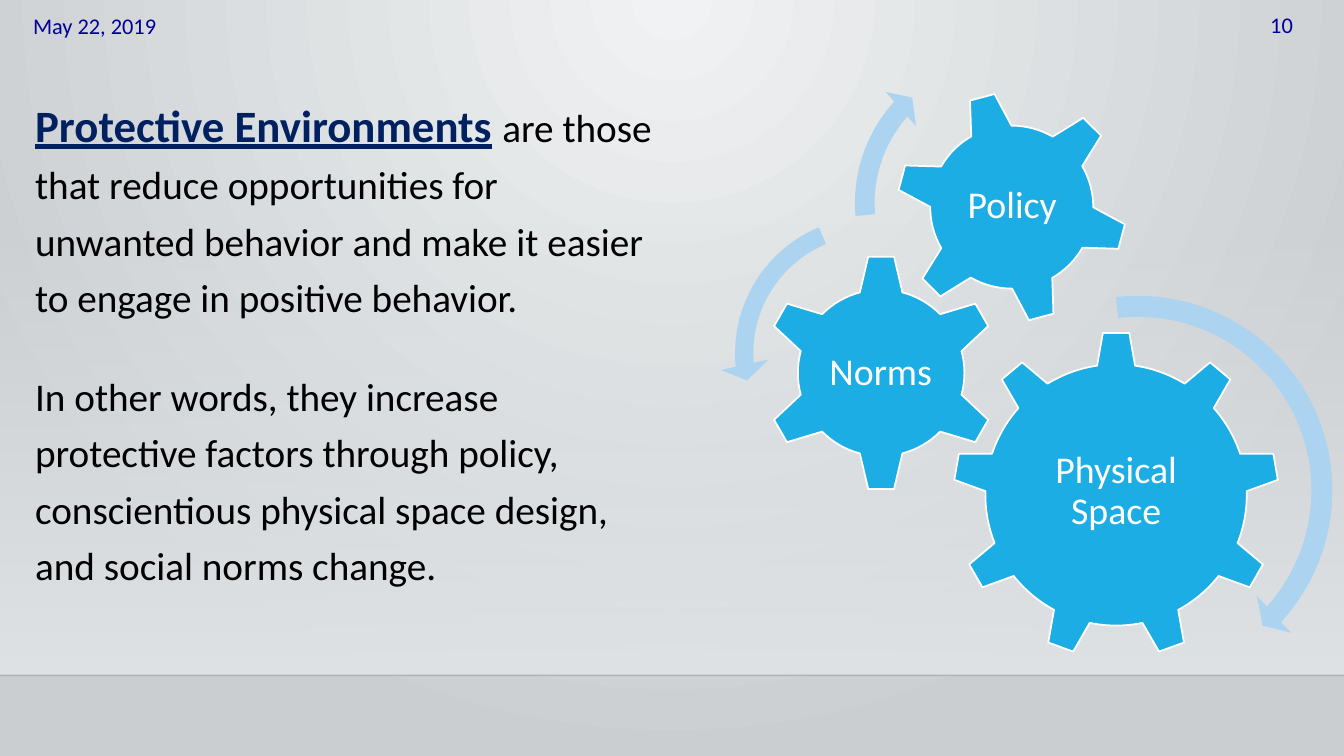
from dataclasses import dataclass

from lxml.etree import SubElement
from pptx import Presentation
from pptx.dml.color import RGBColor
from pptx.enum.shapes import MSO_CONNECTOR, MSO_SHAPE
from pptx.enum.text import MSO_ANCHOR, PP_ALIGN
from pptx.oxml.ns import qn
from pptx.util import Inches, Pt


@dataclass(frozen=True)
class Theme:
    """Colours, font and type sizes of the slide."""
    font: str = "Calibri"
    backdrop: tuple = ("F0F2F3", "CACED0")
    glow: str = "DFE3E5"
    horizon: str = "000001"
    furniture: str = "000099"
    term: str = "002060"
    body: str = "000000"
    gear: str = "1CADE4"
    arrow: str = "ACD3EF"
    white: str = "FFFFFF"
    furniture_size: int = 16
    term_size: int = 32
    body_size: int = 28
    gear_size: int = 27


THEME = Theme()


def colour(code):
    """Return the colour for a hex code."""
    return RGBColor.from_string(code)


def apply(target, formats):
    """Set each named attribute on the target."""
    for name, value in formats.items():
        setattr(target, name, value)


def set_alpha(colour_parent, percent):
    """Give the colour inside an element an opacity."""
    SubElement(colour_parent.find(qn("a:srgbClr")), qn("a:alpha"), val=str(percent * 1000))


def set_gradient(fill, codes):
    """Apply a two-stop gradient running from top to bottom."""
    fill.gradient()
    fill.gradient_angle = 270
    for stop, code, position in zip(fill.gradient_stops, codes, (0, 1)):
        stop.color.rgb = colour(code)
        stop.position = position


def paint_backdrop(slide):
    """Fill the background with a glow spreading from the top centre."""
    set_gradient(slide.background.fill, THEME.backdrop)
    linear = next(slide.element.iter(qn("a:lin")))
    radial = linear.getparent()
    radial.remove(linear)
    circle = SubElement(radial, qn("a:path"), path="circle")
    SubElement(circle, qn("a:fillToRect"), l="43000", t="0", r="43000", b="100000")


def add_preset(slide, preset, box):
    """Add a preset shape without shadow or outline."""
    shape = slide.shapes.add_shape(preset, *map(Inches, box))
    shape.shadow.inherit = False
    shape.line.fill.background()
    return shape


def add_floor(slide):
    """Add the fading panel and the faint horizon below it."""
    panel = add_preset(slide, MSO_SHAPE.RECTANGLE, (0, 2.21, 13.33, 4.49))
    set_gradient(panel.fill, (THEME.glow, THEME.glow))
    set_alpha(next(panel.element.iter(qn("a:gs"))), 0)
    horizon = slide.shapes.add_connector(
        MSO_CONNECTOR.STRAIGHT, Inches(0), Inches(6.7), Inches(13.33), Inches(6.7))
    horizon.line.width = Pt(1)
    horizon.line.color.rgb = colour(THEME.horizon)
    set_alpha(next(horizon.element.iter(qn("a:solidFill"))), 20)
    SubElement(horizon.element.spPr, qn("a:effectLst"))


def add_text(slide, box, paragraphs, frame_formats=None, paragraph_formats=None):
    """Add a wrapping text box from paragraphs of (text, size, colour, extras) runs."""
    frame = slide.shapes.add_textbox(*map(Inches, box)).text_frame
    apply(frame, {"word_wrap": True, **(frame_formats or {})})
    for index, runs in enumerate(paragraphs):
        paragraph = frame.add_paragraph() if index else frame.paragraphs[0]
        apply(paragraph, paragraph_formats or {})
        for text, size, code, extras in runs:
            run = paragraph.add_run()
            run.text = text
            apply(run.font, {"name": THEME.font, "size": Pt(size), **extras})
            run.font.color.rgb = colour(code)
    return frame


def add_furniture(slide, box, text):
    """Add a date or slide number at the top edge."""
    add_text(slide, box, [[(text, THEME.furniture_size, THEME.furniture, {})]])


def add_definition(slide):
    """Add the definition and its restatement."""
    emphasis = {"bold": True, "underline": True}
    definition = [
        ("Protective Environments", THEME.term_size, THEME.term, emphasis),
        (" ", THEME.term_size, THEME.term, {"bold": True}),
        ("are those that reduce opportunities for unwanted behavior and make it "
         "easier to engage in positive behavior.", THEME.body_size, THEME.body, {}),
    ]
    restatement = [
        ("In other words, they increase protective factors through policy, "
         "conscientious physical space design, and social norms change.",
         THEME.body_size, THEME.body, {}),
    ]
    frame = add_text(slide, (0.25, 0.81, 6.32, 5.72), [definition, restatement],
                     paragraph_formats={"line_spacing": 1.2})
    frame.paragraphs[1].space_before = Pt(30)


def add_gear(slide, preset, box, rotation, label, label_box):
    """Add a gear with its upright label."""
    gear = add_preset(slide, preset, box)
    gear.rotation = rotation
    gear.fill.solid()
    gear.fill.fore_color.rgb = colour(THEME.gear)
    gear.line.color.rgb = colour(THEME.white)
    gear.line.width = Pt(1.25)
    margins = {f"margin_{side}": Inches(0.04) for side in ("left", "top", "right", "bottom")}
    add_text(slide, label_box, [[(label, THEME.gear_size, THEME.white, {})]],
             {"vertical_anchor": MSO_ANCHOR.MIDDLE, **margins},
             {"alignment": PP_ALIGN.CENTER, "line_spacing": 0.9})


def add_turn(slide, preset, left, top, size, adjustments):
    """Add a curved arrow showing which way a gear turns."""
    turn = add_preset(slide, preset, (left, top, size, size))
    turn.fill.solid()
    turn.fill.fore_color.rgb = colour(THEME.arrow)
    for index, value in enumerate(adjustments):
        turn.adjustments[index] = value


def main():
    """Build and save the slide."""
    deck = Presentation()
    apply(deck, {"slide_width": Inches(13.33), "slide_height": Inches(7.5)})
    slide = deck.slides.add_slide(deck.slide_layouts[6])
    paint_backdrop(slide)
    add_floor(slide)
    add_furniture(slide, (0.23, 0.07, 2.38, 0.34), "May 22, 2019")
    add_furniture(slide, (12.5, 0.06, 0.6, 0.42), "10")
    add_definition(slide)
    gears = (
        (MSO_SHAPE.GEAR_9, (9.45, 3.29, 3.24, 3.24), 0, "Physical Space", (10.1, 4.05, 1.94, 1.66)),
        (MSO_SHAPE.GEAR_6, (7.56, 2.52, 2.36, 2.36), 0, "Norms", (8.15, 3.12, 1.17, 1.16)),
        (MSO_SHAPE.GEAR_6, (8.88, 0.9, 2.31, 2.31), 345, "Policy", (9.39, 1.4, 1.3, 1.3)),
    )
    for gear in gears:
        add_gear(slide, *gear)
    turns = (
        (MSO_SHAPE.CIRCULAR_ARROW, 9.21, 2.79, 4.15, (0.05, 2.99, 25.39, 158.13, 0.06)),
        (MSO_SHAPE.LEFT_CIRCULAR_ARROW, 7.14, 2, 3.01, (0.06, 4.3, 104.89, 148.38, 0.08)),
        (MSO_SHAPE.CIRCULAR_ARROW, 8.35, 0.39, 3.25, (0.06, 3.94, 133.14, 105.08, 0.07)),
    )
    for turn in turns:
        add_turn(slide, *turn)
    deck.save("out.pptx")


if __name__ == "__main__":
    main()
